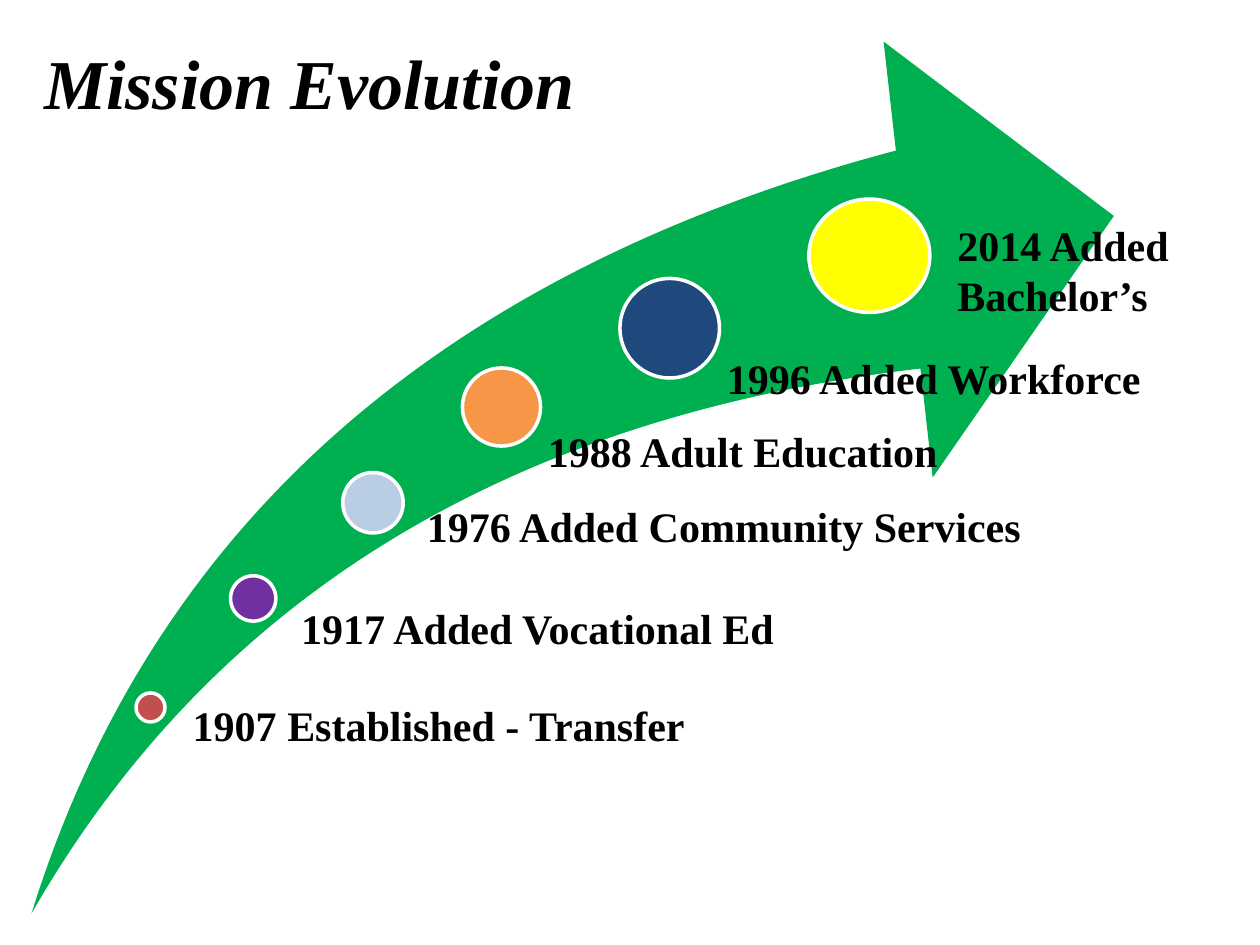
from pptx import Presentation
from pptx import util as u
from pptx.dml.color import RGBColor
from pptx.enum import shapes, text

BLACK = RGBColor(0, 0, 0)
WHITE = RGBColor(0xFF, 0xFF, 0xFF)
GREEN = RGBColor(0x00, 0xB0, 0x50)
RED = RGBColor(0xC0, 0x50, 0x4D)
PURPLE = RGBColor(0x70, 0x30, 0xA0)
PALE_BLUE = RGBColor(0xB9, 0xCD, 0xE5)
ORANGE = RGBColor(0xF7, 0x96, 0x46)
NAVY = RGBColor(0x1F, 0x49, 0x7D)
YELLOW = RGBColor(0xFF, 0xFF, 0x00)

# left, top, width, height, colour
MILESTONES = [
    (1.08, 5.5, 0.23, 0.23, RED),
    (1.83, 4.57, 0.36, 0.36, PURPLE),
    (2.72, 3.75, 0.48, 0.48, PALE_BLUE),
    (3.67, 2.92, 0.62, 0.62, ORANGE),
    (4.92, 2.21, 0.79, 0.79, NAVY),
    (6.42, 1.58, 0.96, 0.9, YELLOW),
]

# left, top, width, height, lines
LABELS = [
    (4.25, 3.33, 4, 0.5, ["1988 Adult Education"]),
    (3.29, 3.92, 5.58, 0.5, ["1976 Added Community Services"]),
    (5.67, 2.75, 4.17, 0.5, ["1996 Added Workforce"]),
    (7.5, 1.69, 2.72, 0.91, ["2014 Added", "Bachelor’s"]),
]

# left, top, width, height, lines, left inset
TIGHT_LABELS = [
    (1.41, 5.6, 4.16, 0.43, ["1907 Established - Transfer"], 0.12),
    (2.2, 4.83, 4.45, 0.54, ["1917 Added Vocational Ed"], 0.19),
]


class SlideBuilder:
    font = "Times New Roman"
    label_size = 24
    title_size = 40
    outline = 2

    def __init__(self, slide):
        self.slide = slide

    def add_lines(self, frame, lines, size, italic=False, spacing=None):
        frame.word_wrap = True
        frame.vertical_anchor = text.MSO_ANCHOR.TOP
        for index, line in enumerate(lines):
            para = frame.add_paragraph() if index else frame.paragraphs[0]
            para.alignment = text.PP_ALIGN.LEFT
            para.line_spacing = spacing
            span = para.add_run()
            span.text = line
            span.font.name = self.font
            span.font.size = u.Pt(size)
            span.font.bold = True
            span.font.italic = italic
            span.font.color.rgb = BLACK

    def title(self, left, top, width, height, wording):
        title = self.slide.shapes.title
        title.left, title.top = u.Inches(left), u.Inches(top)
        title.width, title.height = u.Inches(width), u.Inches(height)
        title.text_frame.auto_size = text.MSO_AUTO_SIZE.NONE
        self.add_lines(title.text_frame, [wording], self.title_size, italic=True)

    def shape(self, kind, left, top, width, height, colour):
        shape = self.slide.shapes.add_shape(
            kind, u.Inches(left), u.Inches(top), u.Inches(width), u.Inches(height))
        shape.shadow.inherit = False
        shape.fill.solid()
        shape.fill.fore_color.rgb = colour
        shape.line.fill.background()
        return shape

    def arrow(self, left, top, width, height):
        arrow = self.shape(shapes.MSO_SHAPE.SWOOSH_ARROW, left, top, width, height, GREEN)
        arrow.adjustments[0] = 0.25
        arrow.adjustments[1] = 0.25

    def milestone(self, left, top, width, height, colour):
        dot = self.shape(shapes.MSO_SHAPE.OVAL, left, top, width, height, colour)
        dot.line.color.rgb = WHITE
        dot.line.width = u.Pt(self.outline)

    def label(self, left, top, width, height, lines, inset=None):
        """A given left inset removes the other insets and tightens the lines."""
        box = self.slide.shapes.add_textbox(
            u.Inches(left), u.Inches(top), u.Inches(width), u.Inches(height))
        frame = box.text_frame
        spacing = None
        if inset is not None:
            frame.margin_left = u.Inches(inset)
            frame.margin_top = frame.margin_right = frame.margin_bottom = 0
            spacing = 0.9
        self.add_lines(frame, lines, self.label_size, spacing=spacing)


def main():
    deck = Presentation()
    deck.slide_width, deck.slide_height = u.Inches(10), u.Inches(7.5)
    page = SlideBuilder(deck.slides.add_slide(deck.slide_layouts.get_by_name("Title Only")))
    page.title(0.25, 0.26, 5.42, 0.77, "Mission Evolution")
    page.arrow(0.25, 0.33, 8.59, 6.92)
    for milestone in MILESTONES:
        page.milestone(*milestone)
    for label in TIGHT_LABELS + LABELS:
        page.label(*label)
    deck.save("out.pptx")


if __name__ == "__main__":
    main()
